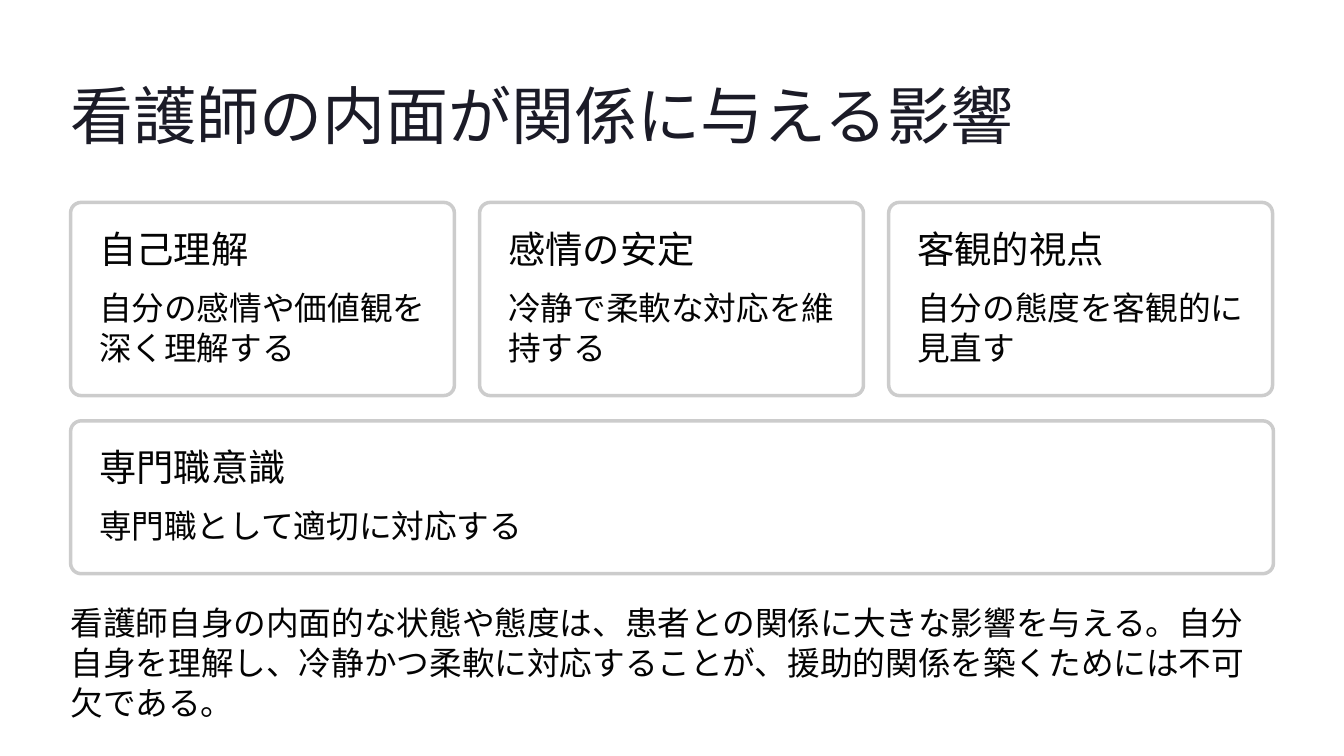
"""Build a slide of four outlined cards on how a nurse's inner state affects relationships."""
import pptx
import pptx.dml.color
import pptx.enum.shapes
import pptx.oxml.ns
import pptx.util
from lxml import etree

PX = 9144
INK = pptx.dml.color.RGBColor(0x03, 0x03, 0x03)
TITLE_INK = pptx.dml.color.RGBColor(0x1B, 0x1B, 0x27)
WHITE = pptx.dml.color.RGBColor(0xFF, 0xFF, 0xFF)
BORDER = pptx.dml.color.RGBColor(0xCC, 0xCC, 0xCC)

LEFT = 84
CONTENT_WIDTH = 1432
CARD_WIDTH = 457
CARD_PITCH = 487
PADDING = 34

presentation = pptx.Presentation()
presentation.slide_width = 1600 * PX
presentation.slide_height = 900 * PX
slide = presentation.slides.add_slide(presentation.slide_layouts[6])


def add_text(text, left, top, width, height, size, spacing, font="Roboto", color=INK, wrap=False):
    box = slide.shapes.add_textbox(left * PX, top * PX, width * PX, height * PX)
    frame = box.text_frame
    frame.margin_left = frame.margin_right = frame.margin_top = frame.margin_bottom = 0
    frame.word_wrap = wrap
    paragraph = frame.paragraphs[0]
    paragraph.text = text
    paragraph.line_spacing = pptx.util.Pt(spacing)
    paragraph.font.name = font
    paragraph.font.size = pptx.util.Pt(size)
    paragraph.font.color.rgb = color


def add_card(heading, body, left, top, width, height, radius, wrap):
    card = slide.shapes.add_shape(
        pptx.enum.shapes.MSO_SHAPE.ROUNDED_RECTANGLE, left * PX, top * PX, width * PX, height * PX)
    card.adjustments[0] = radius
    card.shadow.inherit = False
    card.fill.solid()
    card.fill.fore_color.rgb = WHITE
    fill_color = card.fill._xPr.find(".//" + pptx.oxml.ns.qn("a:srgbClr"))
    etree.SubElement(fill_color, pptx.oxml.ns.qn("a:alpha"), val="95000")
    card.line.color.rgb = BORDER
    card.line.width = pptx.util.Pt(3)
    text_left = left + PADDING
    add_text(heading, text_left, top + 35, 376, 47, 32, 33.5, font="Inter")
    add_text(body, text_left, top + 100, width - 2 * PADDING + 1, height - 134, 28, 34.5, wrap=wrap)


add_text("看護師の内面が関係に与える影響", LEFT, 87, 1125, 94, 54, 67.5, font="Inter", color=TITLE_INK)

TOP_CARDS = [
    ("自己理解", "自分の感情や価値観を深く理解する"),
    ("感情の安定", "冷静で柔軟な対応を維持する"),
    ("客観的視点", "自分の態度を客観的に見直す"),
]
for column, (heading, body) in enumerate(TOP_CARDS):
    add_card(heading, body, LEFT + column * CARD_PITCH, 241, CARD_WIDTH, 230, 0.055, True)

add_card("専門職意識", "専門職として適切に対応する", LEFT, 501, CONTENT_WIDTH, 182, 0.07, False)

add_text(
    "看護師自身の内面的な状態や態度は、患者との関係に大きな影響を与える。"
    "自分自身を理解し、冷静かつ柔軟に対応することが、援助的関係を築くためには不可欠である。",
    LEFT, 716, CONTENT_WIDTH, 96, 28, 34.5, wrap=True)

presentation.save("out.pptx")
